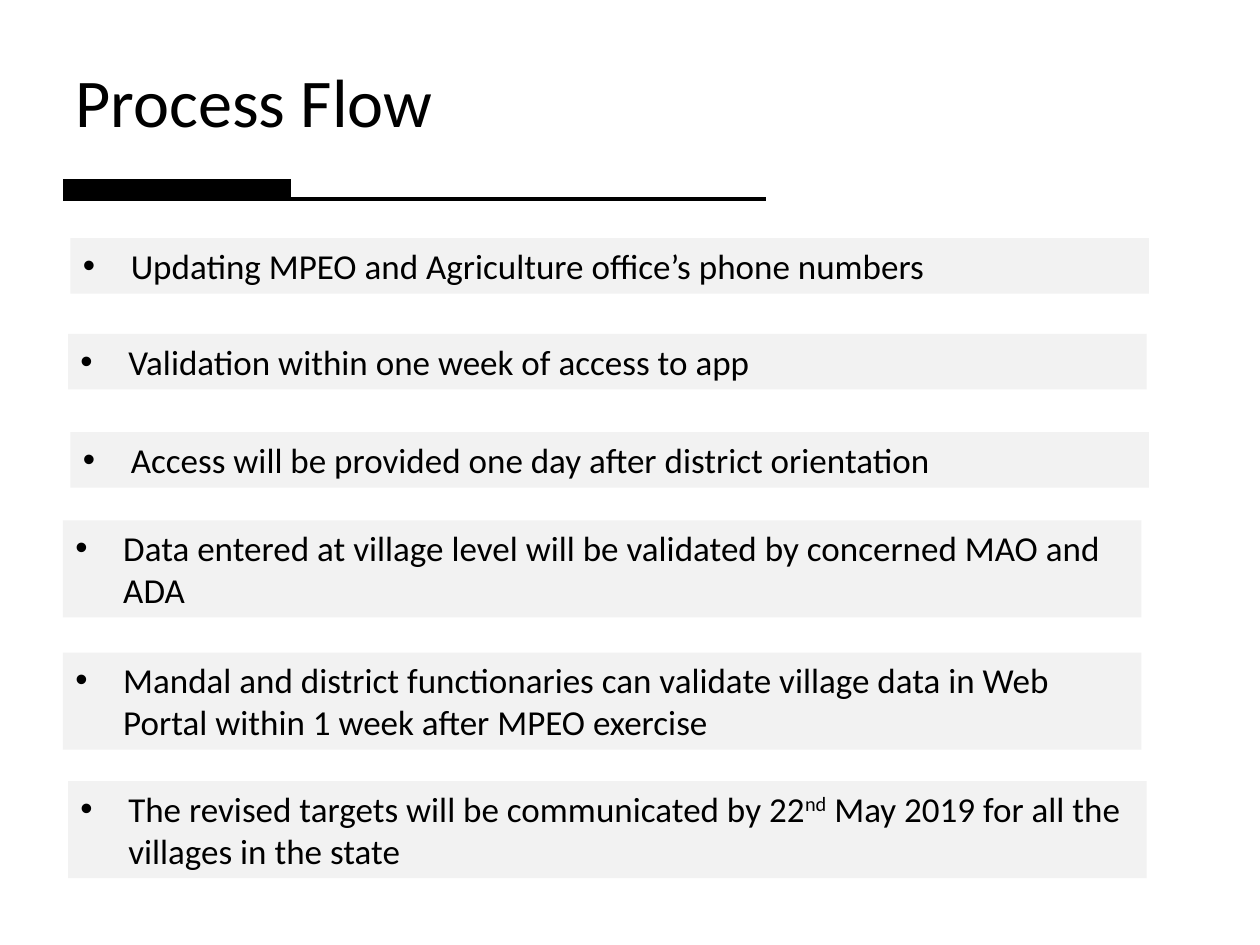
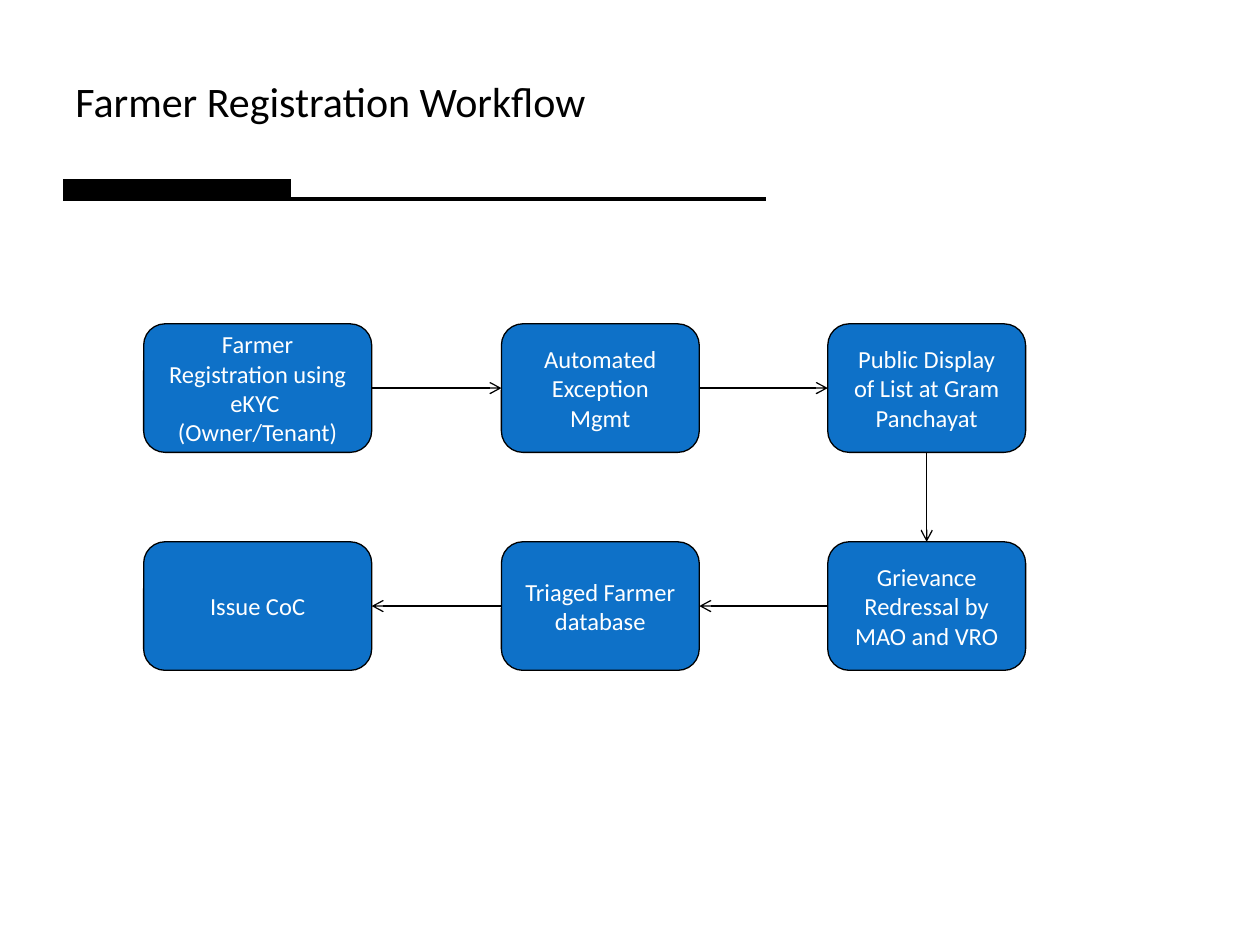
from lxml.etree import SubElement
from pptx import Presentation
from pptx.dml.color import RGBColor
from pptx.enum.shapes import MSO_CONNECTOR, MSO_SHAPE
from pptx.enum.text import MSO_ANCHOR, MSO_AUTO_SIZE, PP_ALIGN
from pptx.oxml.ns import qn
from pptx.util import Inches, Pt

# Content: a paragraph is a string, or a list of (text, baseline %) runs
FLOW_TITLE = "Process Flow"
FLOW_STEPS = [  # left, top, number of lines, text
    (0.56, 1.89, 1, "Updating MPEO and Agriculture office’s phone numbers"),
    (0.54, 2.65, 1, "Validation within one week of access to app"),
    (0.56, 3.43, 1, "Access will be provided one day after district orientation"),
    (0.5, 4.13, 2, "Data entered at village level will be validated by concerned MAO and ADA"),
    (0.5, 5.18, 2, "Mandal and district functionaries can validate village data in Web "
                   "Portal within 1 week after MPEO exercise"),
    (0.54, 6.2, 2, [("The revised targets will be communicated by 22", 0), ("nd", 30),
                    (" May 2019 for all the villages in the state", 0)]),
]

WORKFLOW_TITLE = "Farmer Registration Workflow"
WORKFLOW_STEPS = [  # column, row, paragraphs, in order of the process
    (0, 0, ["Farmer Registration using eKYC ", "(Owner/Tenant)"]),
    (1, 0, ["Automated Exception Mgmt"]),
    (2, 0, ["Public Display of List at Gram Panchayat"]),
    (2, 1, ["Grievance Redressal by MAO and VRO"]),
    (1, 1, ["Triaged Farmer database"]),
    (0, 1, ["Issue CoC"]),
]

# Shared style
COLORS = {"ink": "000000", "band": "F2F2F2", "step": "0E71C8", "step_text": "FFFFFF"}
FONT = "Calibri"
TITLE_RULES = [(1.5, 2.31, 12), (1.58, 6.08, 2)]  # y, right end, weight

# Layout
BAND_W, BAND_LINE_H, BAND_PAD = 8.56, 0.33, 0.11
COLUMNS = [(1.14, 1.81), (3.98, 1.57), (6.57, 1.57)]  # left, width
ROWS = [2.57, 4.3]
STEP_H = 1.02
TOP, LEFT, BOTTOM, RIGHT = range(4)


def rgb(name):
    return RGBColor.from_string(COLORS[name])


def set_text(s, paragraphs, size, color="ink", align=PP_ALIGN.LEFT,
             anchor=MSO_ANCHOR.MIDDLE, bullet=False):
    tf = s.text_frame
    tf.word_wrap = True
    tf.vertical_anchor = anchor
    for i, runs in enumerate(paragraphs):
        p = tf.add_paragraph() if i else tf.paragraphs[0]
        p.alignment = align
        if bullet:
            pPr = p._p.get_or_add_pPr()
            pPr.set("marL", str(Inches(0.38)))
            pPr.set("indent", str(-Inches(0.38)))
            SubElement(pPr, qn("a:buFont"), typeface="Arial")
            SubElement(pPr, qn("a:buChar"), char="•")
        for text, baseline in [(runs, 0)] if isinstance(runs, str) else runs:
            r = p.add_run()
            r.text = text
            r.font.name, r.font.size = FONT, Pt(size)
            r.font.color.rgb = rgb(color)
            if baseline:
                r._r.get_or_add_rPr().set("baseline", str(baseline * 1000))
    return tf


def add_box(slide, kind, left, top, width, height, fill, outline=None):
    s = slide.shapes.add_shape(kind, *map(Inches, (left, top, width, height)))
    s.shadow.inherit = False
    s.fill.solid()
    s.fill.fore_color.rgb = rgb(fill)
    if outline:
        s.line.color.rgb = rgb(outline)
        s.line.width = Pt(0.75)
    else:
        s.line.fill.background()
    return s


def add_line(slide, x1=0, y1=0, x2=0, y2=0, weight=0.75, arrow=False):
    c = slide.shapes.add_connector(MSO_CONNECTOR.STRAIGHT, *map(Inches, (x1, y1, x2, y2)))
    c.line.color.rgb = rgb("ink")
    c.line.width = Pt(weight)
    if arrow:
        SubElement(c.line._get_or_add_ln(), qn("a:tailEnd"), type="arrow")
    SubElement(c._element.spPr, qn("a:effectLst"))
    return c


def add_titled_slide(prs, title, size):
    slide = prs.slides.add_slide(prs.slide_layouts[6])
    for y, right, weight in TITLE_RULES:
        add_line(slide, 0.5, y, right, y, weight)
    box = slide.shapes.add_textbox(*map(Inches, (0.5, 0.17, 8.99, 1.25)))
    set_text(box, [title], size)
    return slide


def build_process_flow(prs):
    slide = add_titled_slide(prs, FLOW_TITLE, 39)
    for left, top, lines, text in FLOW_STEPS:
        band = add_box(slide, MSO_SHAPE.RECTANGLE, left, top, BAND_W,
                       BAND_PAD + lines * BAND_LINE_H, "band")
        tf = set_text(band, [text], 20, anchor=MSO_ANCHOR.TOP, bullet=True)
        tf.auto_size = MSO_AUTO_SIZE.SHAPE_TO_FIT_TEXT


def build_workflow(prs):
    slide = add_titled_slide(prs, WORKFLOW_TITLE, 24)
    boxes = []
    for col, row, paragraphs in WORKFLOW_STEPS:
        left, width = COLUMNS[col]
        s = add_box(slide, MSO_SHAPE.ROUNDED_RECTANGLE, left, ROWS[row], width, STEP_H,
                    "step", outline="ink")
        set_text(s, paragraphs, 14, "step_text", PP_ALIGN.CENTER)
        boxes.append((col, row, s))

    # Arrows follow the process: right, down, then back left
    for (col, row, start), (next_col, next_row, end) in zip(boxes, boxes[1:]):
        if next_row > row:
            sides = BOTTOM, TOP
        elif next_col > col:
            sides = RIGHT, LEFT
        else:
            sides = LEFT, RIGHT
        c = add_line(slide, arrow=True)
        c.begin_connect(start, sides[0])
        c.end_connect(end, sides[1])


def main():
    prs = Presentation()
    prs.slide_width, prs.slide_height = Inches(10), Inches(7.5)
    build_process_flow(prs)
    build_workflow(prs)
    prs.save("out.pptx")


if __name__ == "__main__":
    main()
